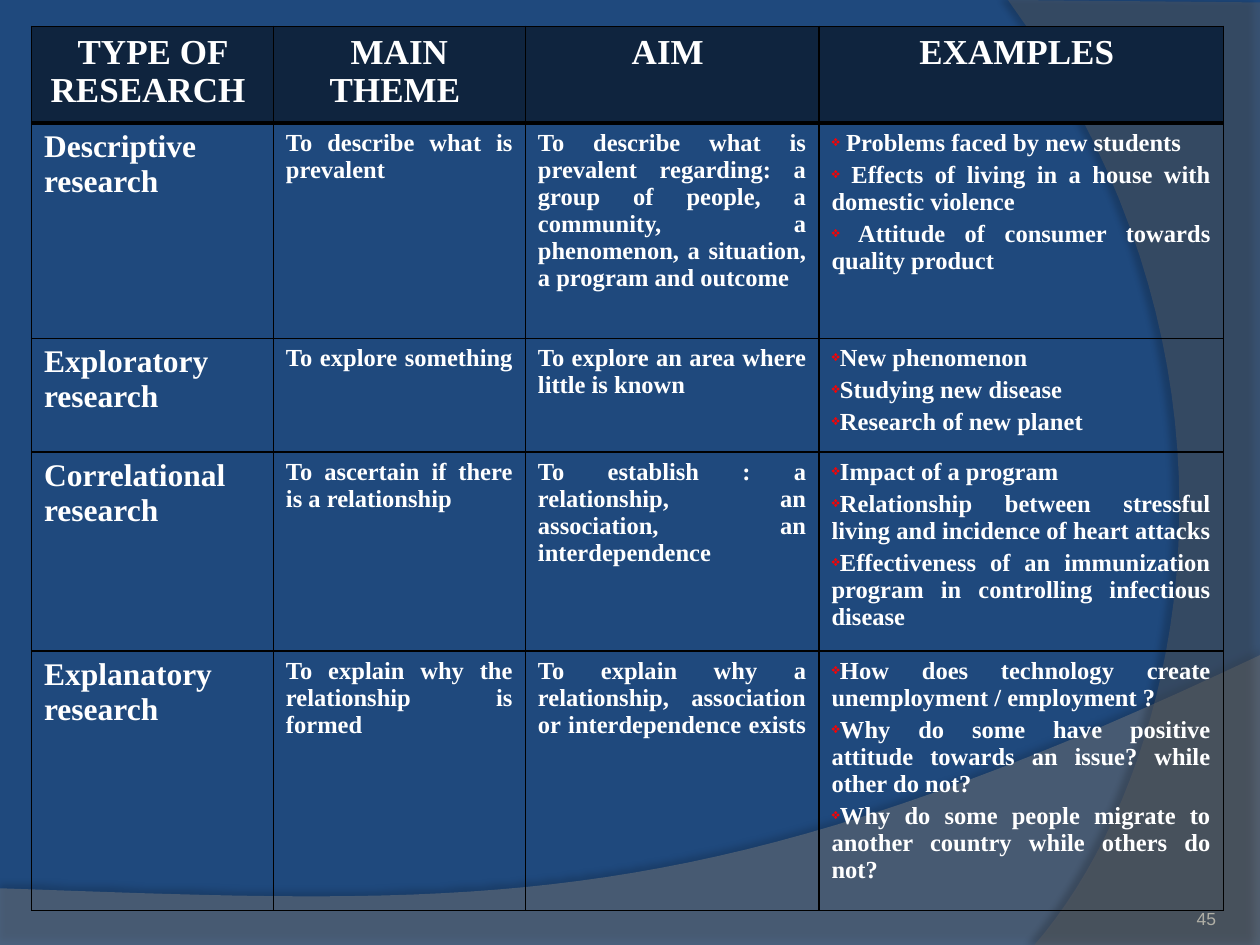
from dataclasses import dataclass

from lxml.etree import SubElement
from pptx import Presentation
from pptx.dml.color import RGBColor as RGB
from pptx.enum.text import MSO_ANCHOR as Anchor, PP_ALIGN as Align
from pptx.oxml.ns import qn
from pptx.util import Inches, Pt


@dataclass(frozen=True)
class Theme:
    back: str = "1F497D"
    header: str = "0F243E"
    text: str = "FFFFFF"
    line: str = "000000"
    bullet: str = "FF0000"
    number: str = "B0AFA6"
    low_wave: str = "7F7F7F"
    side_wave: str = "5E5E5E"
    font: str = "Times New Roman"
    number_font: str = "Arial"
    header_size: int = 20
    label_size: int = 18
    body_size: int = 14
    number_size: int = 10
    thin: int = 1
    thick: int = 3


T = Theme()
WIDTH, HEIGHT = Inches(10), Inches(7.5)
COLS = [1.92, 2, 2.33, 3.21]
ROWS = [0.74, 1.71, 0.9, 1.47, 2.06]
HEADERS = ["TYPE OF RESEARCH ", "MAIN THEME ", "AIM ", "EXAMPLES "]
STUDIES = [
    ("Descriptive research ", "To describe what is prevalent",
     "To describe what is prevalent regarding: a group of people, a community, "
     "a phenomenon, a situation, a program and outcome ",
     [" Problems faced by new students",
      " Effects of living in a house with domestic violence ",
      " Attitude of consumer towards quality product "]),
    ("Exploratory research ", "To explore something ",
     "To explore an area where little is known",
     ["New phenomenon ", "Studying new disease ", "Research of new planet "]),
    ("Correlational research ", "To ascertain if there is a relationship ",
     "To establish : a relationship, an association, an interdependence ",
     ["Impact of a program ",
      "Relationship between stressful living and incidence of heart attacks ",
      "Effectiveness of an immunization program in controlling infectious disease "]),
    ("Explanatory research ", "To explain why the relationship is formed ",
     "To explain why a relationship, association or interdependence exists ",
     ["How does technology create unemployment / employment ?",
      "Why do some have positive attitude towards an issue? while other do not? ",
      "Why do some people migrate to another country while others do not? "]),
]


def add_el(parent, tag, **attrs):
    el = SubElement(parent, qn(tag))
    for name, value in attrs.items():
        el.set(name, str(value))
    return el


def add_run(p, text, size, color=T.text, font=T.font, bold=True):
    r = p.add_run()
    r.text = text
    r.font.size = Pt(size)
    r.font.name = font
    r.font.bold = bold
    r.font.color.rgb = RGB.from_string(color)


def curve(p0, p1, p2, p3, steps=40):
    for i in range(1, steps + 1):
        t = i / steps
        u = 1 - t
        yield tuple(u**3 * a + 3 * u * u * t * b + 3 * u * t * t * c + t**3 * d
                    for a, b, c, d in zip(p0, p1, p2, p3))


def add_wave(slide, corners, bend, color, opacity, shadow):
    points = [(Inches(x), Inches(y)) for x, y in [*corners, *curve(corners[-1], *bend)]]
    builder = slide.shapes.build_freeform(*points[0])
    builder.add_line_segments(points[1:], close=True)
    sp = builder.convert_to_shape()
    sp.line.fill.background()
    sp.fill.solid()
    sp.fill.fore_color.rgb = RGB.from_string(color)
    props = sp.fill._xPr
    add_el(props.find(".//" + qn("a:solidFill"))[0], "a:alpha", val=opacity * 1000)
    alpha, blur, distance, angle = shadow
    sp.shadow.inherit = False
    outer = add_el(props.find(qn("a:effectLst")), "a:outerShdw", blurRad=Pt(blur),
                   dist=Pt(distance), dir=angle * 60000, algn="ctr", rotWithShape=0)
    add_el(add_el(outer, "a:srgbClr", val=T.line), "a:alpha", val=alpha * 1000)


def add_number(slide, text):
    box = slide.shapes.add_textbox(Inches(8.92), Inches(7.02), Inches(0.83), Inches(0.4))
    tf = box.text_frame
    tf.word_wrap = True
    tf.vertical_anchor = Anchor.BOTTOM
    p = tf.paragraphs[0]
    p.alignment = Align.RIGHT
    add_run(p, text, T.number_size, T.number, T.number_font, False)


def add_bullet(p):
    props = p._p.get_or_add_pPr()
    props.set("marL", "0")
    props.set("indent", "0")
    add_el(add_el(props, "a:buClr"), "a:srgbClr", val=T.bullet)
    add_el(props, "a:buSzPct", val=60000)
    add_el(props, "a:buChar", char="❖")


def set_borders(cell, top, bottom):
    props = cell._tc.get_or_add_tcPr()
    for side, width in zip("LRTB", (T.thin, T.thin, top, bottom)):
        ln = add_el(props, f"a:ln{side}", w=Pt(width))
        add_el(add_el(ln, "a:solidFill"), "a:srgbClr", val=T.line)


def fill_cell(cell, texts, size, align, bullets=False):
    tf = cell.text_frame
    for i, text in enumerate(texts):
        p = tf.add_paragraph() if i else tf.paragraphs[0]
        p.alignment = align
        if i:
            p.space_before = Pt(0.2 * size)
        if bullets:
            add_bullet(p)
        add_run(p, text, size)


def add_research_table(slide):
    frame = slide.shapes.add_table(len(ROWS), len(COLS), Inches(0.25), Inches(0.21),
                                   Inches(sum(COLS)), Inches(sum(ROWS)))
    table = frame.table
    table.horz_banding = False
    for col, width in zip(table.columns, COLS):
        col.width = Inches(width)
    for row, height in zip(table.rows, ROWS):
        row.height = Inches(height)
    for i, content in enumerate([HEADERS, *STUDIES]):
        for j, item in enumerate(content):
            cell = table.cell(i, j)
            set_borders(cell, T.thick if i == 1 else T.thin, T.thick if i == 0 else T.thin)
            if i == 0:
                cell.fill.solid()
                cell.fill.fore_color.rgb = RGB.from_string(T.header)
                fill_cell(cell, [item], T.header_size, Align.CENTER)
            else:
                cell.fill.background()
                listed = isinstance(item, list)
                fill_cell(cell, item if listed else [item],
                          T.body_size if j else T.label_size, Align.JUSTIFY, listed)


def main():
    prs = Presentation()
    prs.slide_width, prs.slide_height = WIDTH, HEIGHT
    slide = prs.slides.add_slide(prs.slide_layouts[6])
    slide.background.fill.solid()
    slide.background.fill.fore_color.rgb = RGB.from_string(T.back)
    add_wave(slide, [(0, 7.05), (0, 7.5), (10, 7.5), (10, 5.2)],
             [(5.59, 7.29), (3.91, 7.19), (0, 7.05)], T.low_wave, 45, (35, 4, 3.5, 270))
    add_wave(slide, [(10, 0.02), (10, 7.5), (8.21, 7.5)],
             [(9.35, 6.19), (10.18, 3), (8, 0)], T.side_wave, 40, (45, 4, 4, 180))
    add_number(slide, "45")
    add_research_table(slide)
    prs.save("out.pptx")


if __name__ == "__main__":
    main()
